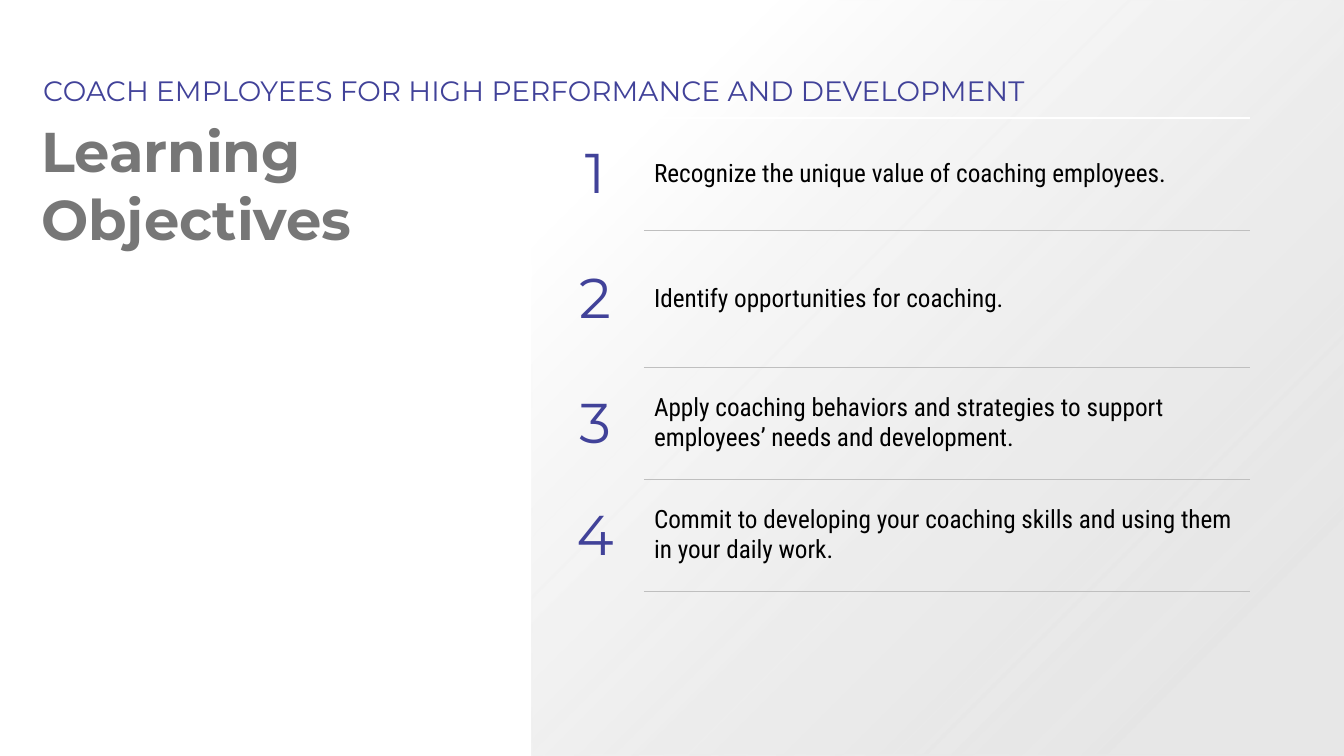
from dataclasses import dataclass
from typing import Optional

from lxml import etree
from pptx import Presentation
from pptx import util as u
from pptx.dml.color import RGBColor
from pptx.enum import shapes, text
from pptx.oxml import ns

WHITE = RGBColor(0xFF, 0xFF, 0xFF)
BLACK = RGBColor(0x00, 0x00, 0x00)
PANEL_GRAY = RGBColor(0xD9, 0xD9, 0xD9)
RULE_GRAY = RGBColor(0xBF, 0xBF, 0xBF)
TITLE_GRAY = RGBColor(0x77, 0x77, 0x77)
INDIGO = RGBColor(0x41, 0x42, 0x99)

SLIDE_WIDTH, SLIDE_HEIGHT = 960.48, 540
PANEL_LEFT = 380.16
COLUMN_WIDTHS = (70, 433)


@dataclass(frozen=True)
class TextStyle:
    font: str
    size: float
    color: RGBColor
    bold: bool = False


@dataclass(frozen=True)
class Rule:
    color: RGBColor
    width: float


@dataclass(frozen=True)
class Objective:
    wording: str
    height: float


TITLE = TextStyle("Montserrat", 40, TITLE_GRAY, True)
SUBTITLE = TextStyle("Montserrat", 20, INDIGO)
NUMBER = TextStyle("Montserrat", 40, INDIGO)
WORDING = TextStyle("Roboto Condensed", 18, BLACK)

TOP_RULE = Rule(WHITE, 1)
ROW_RULE = Rule(RULE_GRAY, 0.25)

OBJECTIVES = (
    Objective("Recognize the unique value of coaching employees.", 80),
    Objective("Identify opportunities for coaching.", 98),
    Objective("Apply coaching behaviors and strategies to support "
              "employees’ needs and development.", 80),
    Objective("Commit to developing your coaching skills and using them "
              "in your daily work.", 80),
)


def write(frame, wording: str, style: TextStyle, align=text.PP_ALIGN.LEFT) -> None:
    frame.text = wording
    for para in frame.paragraphs:
        para.alignment = align
        for span in para.runs:
            span.font.name = style.font
            span.font.size = u.Pt(style.size)
            span.font.bold = style.bold
            span.font.color.rgb = style.color


def add_text(page, left: float, top: float, width: float, height: float,
             wording: str, style: TextStyle) -> None:
    box = page.shapes.add_textbox(u.Pt(left), u.Pt(top), u.Pt(width), u.Pt(height))
    box.text_frame.word_wrap = True
    write(box.text_frame, wording, style)


def set_borders(cell, top: Optional[Rule] = None, bottom: Optional[Rule] = None) -> None:
    properties = cell._tc.get_or_add_tcPr()
    edges = (("a:lnL", None), ("a:lnR", None), ("a:lnT", top), ("a:lnB", bottom))
    for index, (tag, rule) in enumerate(edges):
        line = etree.Element(ns.qn(tag))
        if rule:
            line.set("w", str(int(u.Pt(rule.width))))
            fill = etree.SubElement(line, ns.qn("a:solidFill"))
            etree.SubElement(fill, ns.qn("a:srgbClr"), val=str(rule.color))
        else:
            etree.SubElement(line, ns.qn("a:noFill"))
        properties.insert(index, line)


def add_panel(page) -> None:
    panel = page.shapes.add_shape(
        shapes.MSO_SHAPE.RECTANGLE, u.Pt(PANEL_LEFT), u.Pt(0),
        u.Pt(SLIDE_WIDTH - PANEL_LEFT), u.Pt(SLIDE_HEIGHT))
    panel.shadow.inherit = False
    panel.line.fill.background()
    panel.fill.gradient()
    panel.fill.gradient_angle = 315
    stops = panel.fill.gradient_stops
    for stop, position, color in zip(stops, (0.15, 0.85), (WHITE, PANEL_GRAY)):
        stop.position = position
        stop.color.rgb = color
    # The gray end is partly transparent
    gray = panel.fill._xPr.findall(".//" + ns.qn("a:srgbClr"))[-1]
    etree.SubElement(gray, ns.qn("a:alpha"), val="64000")


def add_objectives(page) -> None:
    height = sum(objective.height for objective in OBJECTIVES)
    table = page.shapes.add_table(
        len(OBJECTIVES), len(COLUMN_WIDTHS), u.Pt(390.24), u.Pt(84.24),
        u.Pt(sum(COLUMN_WIDTHS)), u.Pt(height)).table
    table.first_row = table.horz_banding = False
    for column, width in zip(table.columns, COLUMN_WIDTHS):
        column.width = u.Pt(width)

    for index, objective in enumerate(OBJECTIVES):
        table.rows[index].height = u.Pt(objective.height)
        number, wording = table.rows[index].cells
        write(number.text_frame, str(index + 1), NUMBER, text.PP_ALIGN.CENTER)
        write(wording.text_frame, objective.wording, WORDING)
        set_borders(number)
        set_borders(wording, ROW_RULE if index else TOP_RULE, ROW_RULE)
        for cell in (number, wording):
            cell.vertical_anchor = text.MSO_ANCHOR.MIDDLE
            cell.fill.background()


def main() -> None:
    deck = Presentation()
    deck.slide_width, deck.slide_height = u.Pt(SLIDE_WIDTH), u.Pt(SLIDE_HEIGHT)
    page = deck.slides.add_slide(deck.slide_layouts[6])

    # Shaded right side
    add_panel(page)

    # Headings
    add_text(page, 22.32, 79.92, 542.16, 123.12, "Learning\nObjectives", TITLE)
    add_text(page, 23.76, 48.96, 830.88, 28.8,
             "COACH EMPLOYEES FOR HIGH PERFORMANCE AND DEVELOPMENT", SUBTITLE)

    # Numbered objectives
    add_objectives(page)

    deck.save("out.pptx")


if __name__ == "__main__":
    main()
